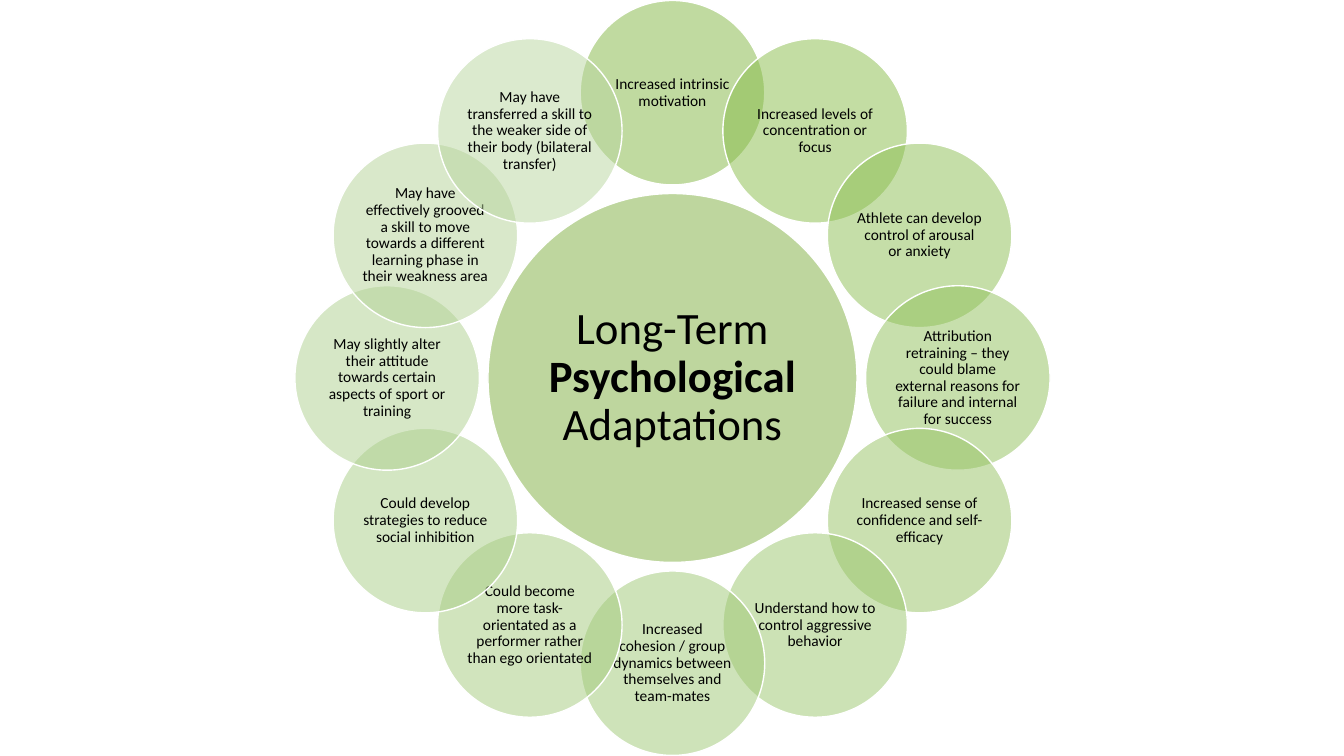
from math import cos, pi, sin

from lxml.etree import SubElement
from pptx import Presentation
from pptx.dml.color import RGBColor
from pptx.enum.shapes import MSO_SHAPE
from pptx.enum.text import MSO_ANCHOR, PP_ALIGN
from pptx.oxml.ns import qn
from pptx.util import Inches, Pt

FONT = "Calibri"
CENTRE_X, CENTRE_Y = 6.67, 3.75
HUB_DIAMETER = 3.66
PETAL_DIAMETER = 1.83
RING_RADIUS = 2.83

COLOURS = {
    "outline": "FFFFFF",
    "text": "000000",
    "hub": "7EAF3F",
    "motivation": "83B742",
    "focus": "88BC49",
    "arousal": "8CBE52",
    "attribution": "91C15B",
    "confidence": "96C363",
    "aggression": "9AC66C",
    "cohesion": "9FC875",
    "task": "A4CB7D",
    "inhibition": "A9CE86",
    "attitude": "AED08F",
    "grooving": "B4D397",
    "transfer": "B9D69F",
}

TITLE = [("Long-Term ", False), ("Psychological ", True), ("Adaptations", False)]

ADAPTATIONS = [
    ("motivation", "Increased intrinsic motivation"),
    ("focus", "Increased levels of concentration or focus"),
    ("arousal", "Athlete can develop control of arousal or anxiety"),
    ("attribution", "Attribution retraining – they could blame external reasons "
                    "for failure and internal for success"),
    ("confidence", "Increased sense of confidence and self-efficacy"),
    ("aggression", "Understand how to control aggressive behavior"),
    ("cohesion", "Increased cohesion / group dynamics between themselves and team-mates"),
    ("task", "Could become more task-orientated as a performer rather than ego orientated"),
    ("inhibition", "Could develop strategies to reduce social inhibition"),
    ("attitude", "May slightly alter their attitude towards certain aspects of sport or training"),
    ("grooving", "May have effectively grooved a skill to move towards a different "
                 "learning phase in their weakness area"),
    ("transfer", "May have transferred a skill to the weaker side of their body "
                 "(bilateral transfer)"),
]


def colour(name):
    """Return the named colour."""
    return RGBColor.from_string(COLOURS[name])


def add_circle(slide, x, y, diameter, fill):
    """Add a half-transparent circle centred on x, y."""
    circle = slide.shapes.add_shape(
        MSO_SHAPE.OVAL, Inches(x - diameter / 2), Inches(y - diameter / 2),
        Inches(diameter), Inches(diameter))
    circle.shadow.inherit = False
    circle.fill.solid()
    circle.fill.fore_color.rgb = colour(fill)
    tint = circle.element.spPr.find(qn("a:solidFill")).find(qn("a:srgbClr"))
    SubElement(tint, qn("a:alpha")).set("val", "50000")
    circle.line.color.rgb = colour("outline")
    circle.line.width = Pt(1)
    return circle


def write_label(circle, runs, size, inset):
    """Write centred runs of (text, bold) inside a circle."""
    frame = circle.text_frame
    frame.word_wrap = True
    frame.vertical_anchor = MSO_ANCHOR.MIDDLE
    frame.margin_left = frame.margin_right = Inches(inset)
    frame.margin_top = frame.margin_bottom = Inches(inset)
    paragraph = frame.paragraphs[0]
    paragraph.alignment = PP_ALIGN.CENTER
    paragraph.line_spacing = 0.9
    for text, bold in runs:
        run = paragraph.add_run()
        run.text = text
        run.font.name = FONT
        run.font.size = Pt(size)
        run.font.bold = bold
        run.font.color.rgb = colour("text")


def add_hub(slide):
    """Add the central circle with the title."""
    hub = add_circle(slide, CENTRE_X, CENTRE_Y, HUB_DIAMETER, "hub")
    write_label(hub, TITLE, 32, 0.04)


def add_petals(slide):
    """Add the ring of adaptations, clockwise from the top."""
    for index, (name, text) in enumerate(ADAPTATIONS):
        angle = 2 * pi * index / len(ADAPTATIONS)
        petal = add_circle(
            slide, CENTRE_X + RING_RADIUS * sin(angle),
            CENTRE_Y - RING_RADIUS * cos(angle), PETAL_DIAMETER, name)
        write_label(petal, [(text, False)], 11, 0.02)


def main():
    """Build and save the slide."""
    deck = Presentation()
    deck.slide_width = Inches(13.33)
    deck.slide_height = Inches(7.5)
    slide = deck.slides.add_slide(deck.slide_layouts[6])
    add_hub(slide)
    add_petals(slide)
    deck.save("out.pptx")


if __name__ == "__main__":
    main()
